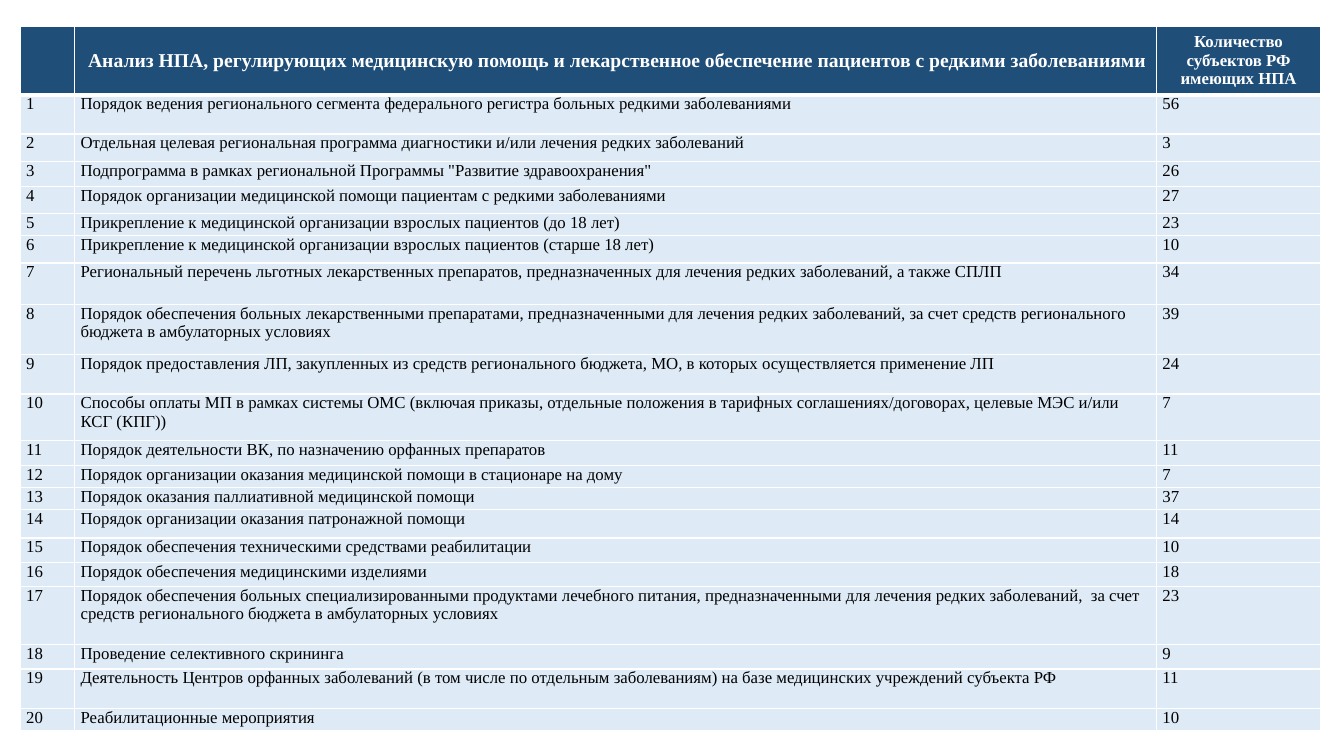
from lxml import etree
from pptx import Presentation
from pptx import util as u
from pptx.dml.color import RGBColor
from pptx.enum import text
from pptx.oxml import ns

COLORS = {"header": "1F4E79", "body": "DEEBF7", "border": "FFFFFF",
          "header_text": "FFFFFF", "body_text": "000000"}
MARGINS = {"margin_left": u.Inches(0.06), "margin_right": u.Inches(0.06),
           "margin_top": 0, "margin_bottom": 0}
HEADER_TITLE = ("Анализ НПА, регулирующих медицинскую помощь и лекарственное "
                "обеспечение пациентов с редкими заболеваниями")
HEADER_COUNT = "Количество субъектов РФ имеющих НПА"
HEADER_HEIGHT = 0.68
COLUMN_WIDTHS = [0.54, 10.73, 1.63]

# Regulation, number of regions, row height
REGULATIONS = [
    ("Порядок ведения регионального сегмента федерального регистра больных редкими заболеваниями", 56, 0.39),
    ("Отдельная целевая региональная программа диагностики и/или лечения редких заболеваний", 3, 0.27),
    ('Подпрограмма в рамках региональной Программы "Развитие здравоохранения"', 26, 0.25),
    ("Порядок организации медицинской помощи пациентам с редкими заболеваниями", 27, 0.27),
    ("Прикрепление к медицинской организации взрослых пациентов (до 18 лет)", 23, 0.22),
    ("Прикрепление к медицинской организации взрослых пациентов (старше 18 лет)", 10, 0.27),
    ("Региональный перечень льготных лекарственных препаратов, предназначенных для лечения "
     "редких заболеваний, а также СПЛП", 34, 0.41),
    ("Порядок обеспечения больных лекарственными препаратами, предназначенными для лечения редких "
     "заболеваний, за счет средств регионального бюджета в амбулаторных условиях", 39, 0.5),
    ("Порядок предоставления ЛП, закупленных из средств регионального бюджета, МО, "
     "в которых осуществляется применение ЛП", 24, 0.39),
    ("Способы оплаты МП в рамках системы ОМС (включая приказы, отдельные положения в тарифных "
     "соглашениях/договорах, целевые МЭС и/или КСГ (КПГ))", 7, 0.46),
    ("Порядок деятельности ВК, по назначению орфанных препаратов", 11, 0.25),
    ("Порядок организации оказания медицинской помощи в стационаре на дому", 7, 0.22),
    ("Порядок оказания паллиативной медицинской помощи", 37, 0.22),
    ("Порядок организации оказания патронажной помощи", 14, 0.28),
    ("Порядок обеспечения техническими средствами реабилитации", 10, 0.24),
    ("Порядок обеспечения медицинскими изделиями", 18, 0.24),
    ("Порядок обеспечения больных специализированными продуктами лечебного питания, предназначенными "
     "для лечения редких заболеваний,  за счет средств регионального бюджета в амбулаторных условиях", 23, 0.58),
    ("Проведение селективного скрининга", 9, 0.24),
    ("Деятельность Центров орфанных заболеваний (в том числе по отдельным заболеваниям) "
     "на базе медицинских учреждений субъекта РФ", 11, 0.39),
    ("Реабилитационные мероприятия", 10, 0.22),
]


def style_cell(cell, part, bottom_width):
    """Set margins, borders and fill of one cell."""
    for name, value in MARGINS.items():
        setattr(cell, name, value)
    properties = cell._tc.get_or_add_tcPr()
    for side, width in (("L", 1), ("R", 1), ("T", 1), ("B", bottom_width)):
        line = etree.SubElement(properties, ns.qn(f"a:ln{side}"), w=str(u.Pt(width)))
        paint = etree.SubElement(line, ns.qn("a:solidFill"))
        etree.SubElement(paint, ns.qn("a:srgbClr"), val=COLORS["border"])
    cell.fill.solid()
    cell.fill.fore_color.rgb = RGBColor.from_string(COLORS[part])


def add_text(cell, words, part, size=12):
    """Add one formatted run to the cell's paragraph."""
    run = cell.text_frame.paragraphs[0].add_run()
    run.text = words
    font = {"name": "Times New Roman", "size": u.Pt(size), "bold": part == "header"}
    for name, value in font.items():
        setattr(run.font, name, value)
    run.font.color.rgb = RGBColor.from_string(COLORS[part + "_text"])


prs = Presentation()
prs.slide_width, prs.slide_height = u.Inches(13.33), u.Inches(7.5)
slide = prs.slides.add_slide(prs.slide_layouts[6])

# Table grid
row_heights = [HEADER_HEIGHT] + [height for _, _, height in REGULATIONS]
regulation_table = slide.shapes.add_table(
    len(row_heights), len(COLUMN_WIDTHS), u.Inches(0.2), u.Inches(0.26),
    u.Inches(sum(COLUMN_WIDTHS)), u.Inches(sum(row_heights))).table
regulation_table.horz_banding = False
for column, width in zip(regulation_table.columns, COLUMN_WIDTHS):
    column.width = u.Inches(width)
for row, height in zip(regulation_table.rows, row_heights):
    row.height = u.Inches(height)

# Header row
header_cells = list(regulation_table.rows[0].cells)
for cell in header_cells:
    style_cell(cell, "header", 3)
    cell.vertical_anchor = text.MSO_ANCHOR.MIDDLE
    cell.text_frame.paragraphs[0].alignment = text.PP_ALIGN.CENTER
add_text(header_cells[1], " ", "header")
add_text(header_cells[1], HEADER_TITLE, "header", 14)
add_text(header_cells[2], HEADER_COUNT, "header")

# Numbered regulations
for number, (regulation, regions, _) in enumerate(REGULATIONS, 1):
    for cell, value in zip(regulation_table.rows[number].cells, (number, regulation, regions)):
        style_cell(cell, "body", 1)
        add_text(cell, str(value), "body")

prs.save("out.pptx")
